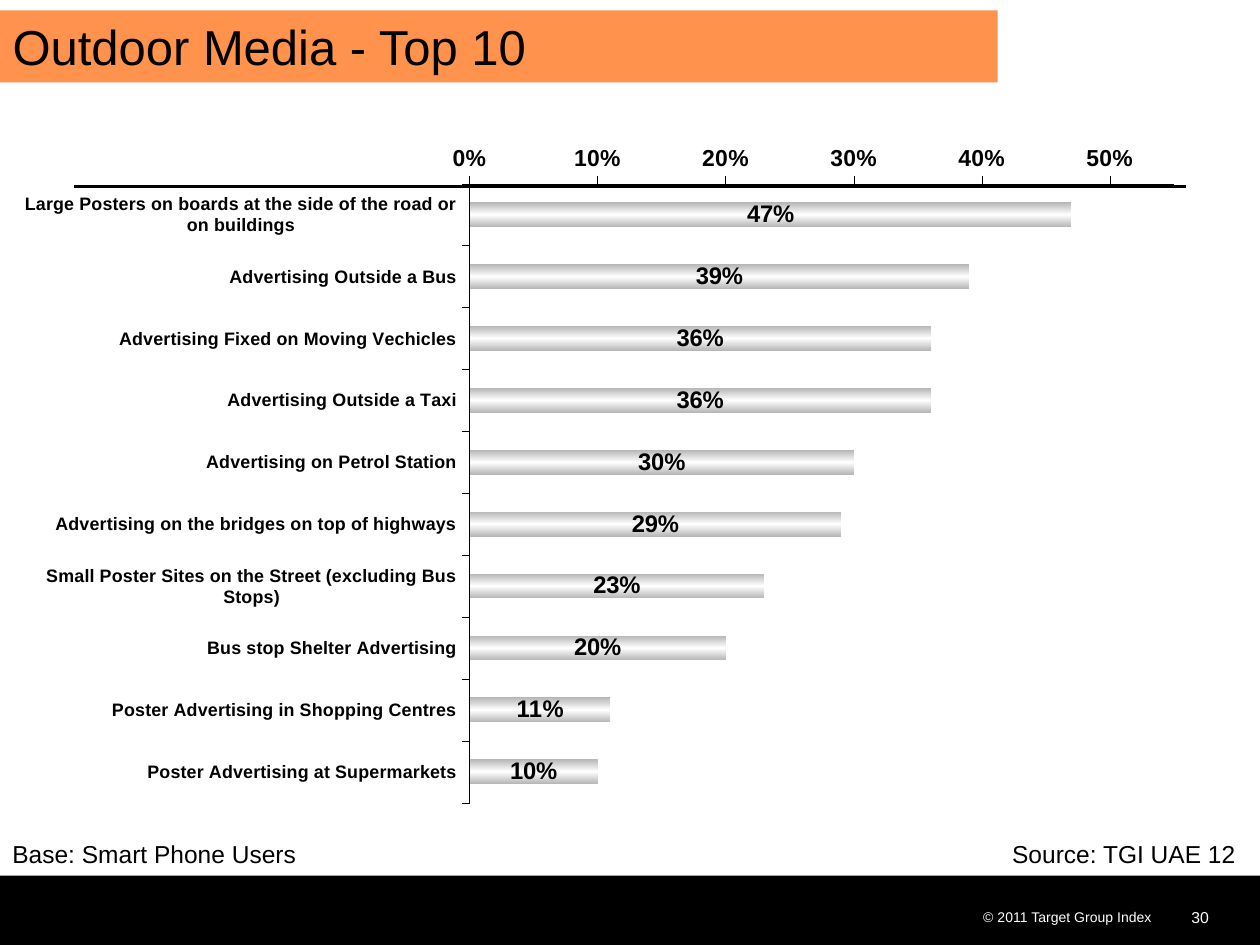
from copy import deepcopy

from lxml.etree import SubElement
from pptx import Presentation
from pptx.chart.data import CategoryChartData
from pptx.dml.color import RGBColor
from pptx.enum.chart import XL_CHART_TYPE as ChartType
from pptx.enum.chart import XL_LABEL_POSITION as LabelPosition
from pptx.enum.chart import XL_TICK_MARK as TickMark
from pptx.enum.shapes import MSO_CONNECTOR as Connector
from pptx.enum.shapes import MSO_SHAPE as Shape
from pptx.enum.text import MSO_ANCHOR as Anchor
from pptx.enum.text import MSO_AUTO_SIZE as AutoSize
from pptx.enum.text import PP_ALIGN as Align
from pptx.oxml.ns import qn
from pptx.util import Cm, Pt

BLACK = RGBColor(0x00, 0x00, 0x00)
WHITE = RGBColor(0xFF, 0xFF, 0xFF)
ORANGE = RGBColor(0xFF, 0x64, 0x00)
GREY = RGBColor(0xB6, 0xB6, 0xB6)
FONT = "Arial"

MEDIA_REACH = {
    "Large Posters on boards at the side of the road or on buildings": 0.47,
    "Advertising Outside a Bus": 0.39,
    "Advertising Fixed on Moving Vechicles": 0.36,
    "Advertising Outside a Taxi": 0.36,
    "Advertising on Petrol Station": 0.30,
    "Advertising on the bridges on top of highways": 0.29,
    "Small Poster Sites on the Street (excluding Bus Stops)": 0.23,
    "Bus stop Shelter Advertising": 0.20,
    "Poster Advertising in Shopping Centres": 0.11,
    "Poster Advertising at Supermarkets": 0.10,
}


def style_font(font, size, color=BLACK, bold=False):
    font.name, font.size, font.bold = FONT, Pt(size), bold
    font.color.rgb = color


def add_text(page, box, text, size, color=BLACK, align=Align.LEFT, inset=True):
    """Place a one-paragraph text box and return its paragraph."""
    frame = page.shapes.add_textbox(*map(Cm, box)).text_frame
    frame.word_wrap = True
    frame.vertical_anchor = Anchor.MIDDLE
    if not inset:
        frame.margin_left = frame.margin_right = 0
        frame.margin_top = frame.margin_bottom = 0
    para = frame.paragraphs[0]
    para.text, para.alignment = text, align
    style_font(para.font, size, color)
    return para


def add_footer(page, box):
    left, top, width, height = box
    band = page.shapes.add_shape(Shape.RECTANGLE, *map(Cm, box))
    band.shadow.inherit = False
    band.fill.solid()
    band.fill.fore_color.rgb = BLACK
    band.line.fill.background()
    # Copyright line and page number
    add_text(page, (left + 12.5, top + 0.69, 10.72, 0.3),
             "© 2011 Target Group Index", 8, WHITE, Align.RIGHT, inset=False)
    add_text(page, (left + 23.62, top + 0.4, 1, 0.88), "30", 9, WHITE, Align.RIGHT)


def add_rule(page, left, top, width):
    rule = page.shapes.add_connector(
        Connector.STRAIGHT, Cm(left), Cm(top), Cm(left + width), Cm(top))
    rule.line.color.rgb = BLACK
    rule.line.width = Pt(2.25)
    SubElement(rule._element.spPr, qn("a:effectLst"))


def place_title(page, box, text):
    title = page.shapes.title
    title.left, title.top, title.width, title.height = map(Cm, box)
    title.fill.solid()
    title.fill.fore_color.rgb = ORANGE
    color = title._element.spPr.find(".//" + qn("a:srgbClr"))
    SubElement(color, qn("a:alpha"), val="70000")
    frame = title.text_frame
    frame.auto_size = AutoSize.NONE
    frame.vertical_anchor = Anchor.MIDDLE
    para = frame.paragraphs[0]
    para.text, para.alignment = text, Align.LEFT
    style_font(para.font, 28)


def set_plot_area(chart, **fractions):
    """Fix the inner plot area as fractions of the chart."""
    area = chart._chartSpace.chart.plotArea
    old = area.find(qn("c:layout"))
    if old is not None:
        area.remove(old)
    layout = SubElement(area, qn("c:layout"))
    area.insert(0, layout)
    manual = SubElement(layout, qn("c:manualLayout"))
    settings = {"layoutTarget": "inner", "xMode": "edge", "yMode": "edge", **fractions}
    for name, value in settings.items():
        SubElement(manual, qn(f"c:{name}"), val=str(value))


def fill_bars(series):
    """Shade the bars grey, white, grey from top to bottom."""
    fill = series.format.fill
    fill.gradient()
    fill.gradient_angle = 90
    stop_list = series._element.find(".//" + qn("a:gsLst"))
    stop_list.append(deepcopy(stop_list[0]))
    for stop, position, color in zip(fill.gradient_stops, (0, 0.5, 1), (GREY, WHITE, GREY)):
        stop.position = position
        stop.color.rgb = color


def add_reach_chart(page, box):
    data = CategoryChartData(number_format="0%")
    data.categories = list(MEDIA_REACH)
    data.add_series("Series 1", list(MEDIA_REACH.values()))
    chart = page.shapes.add_chart(ChartType.BAR_CLUSTERED, *map(Cm, box), data).chart
    chart.has_legend = chart.has_title = False
    style_font(chart.font, 14.8, bold=True)
    set_plot_area(chart, x=0.367, y=0.081, w=0.594, h=0.853)

    # Axes: largest category on top, scale along the top edge
    for axis, size in ((chart.category_axis, 10.3), (chart.value_axis, 13.2)):
        axis.has_major_gridlines = False
        axis.major_tick_mark = TickMark.OUTSIDE
        axis.minor_tick_mark = TickMark.NONE
        axis.format.line.color.rgb = BLACK
        axis.format.line.width = Pt(0.22)
        style_font(axis.tick_labels.font, size, bold=True)
    chart.category_axis.reverse_order = True
    scale = chart.value_axis
    scale.minimum_scale, scale.maximum_scale, scale.major_unit = 0, 0.55, 0.1
    scale.tick_labels.number_format = "0%"
    scale.tick_labels.number_format_is_linked = False

    # Bars and their labels
    plot = chart.plots[0]
    plot.gap_width = 150
    plot.vary_by_categories = False
    fill_bars(plot.series[0])
    labels = plot.series[0].data_labels
    labels.show_value = True
    labels.position = LabelPosition.CENTER
    labels.number_format = "0%"
    labels.number_format_is_linked = False
    style_font(labels.font, 13.7, bold=True)


def add_base_note(page, box, base, source):
    """Base on the left, source at a right tab."""
    para = add_text(page, box, "", 14)
    properties = para._p.get_or_add_pPr()
    tabs = SubElement(properties, qn("a:tabLst"))
    properties.insert(0, tabs)
    SubElement(tabs, qn("a:tab"), pos=str(Cm(24.66)), algn="r")
    para.add_run().text = f"{base}\t{source}"


def main():
    deck = Presentation()
    deck.slide_width, deck.slide_height = Cm(25.4), Cm(19.05)
    page = deck.slides.add_slide(deck.slide_layouts[5])
    add_footer(page, (0, 17.65, 25.4, 1.4))
    add_rule(page, 1.5, 3.76, 22.4)
    add_reach_chart(page, (0.5, 2.52, 24.1, 14.63))
    place_title(page, (0, 0.21, 20.11, 1.45), "Outdoor Media - Top 10")
    add_base_note(page, (0, 16.69, 25.4, 1.02), "Base: Smart Phone Users", "Source: TGI UAE 12")
    deck.save("out.pptx")


if __name__ == "__main__":
    main()
